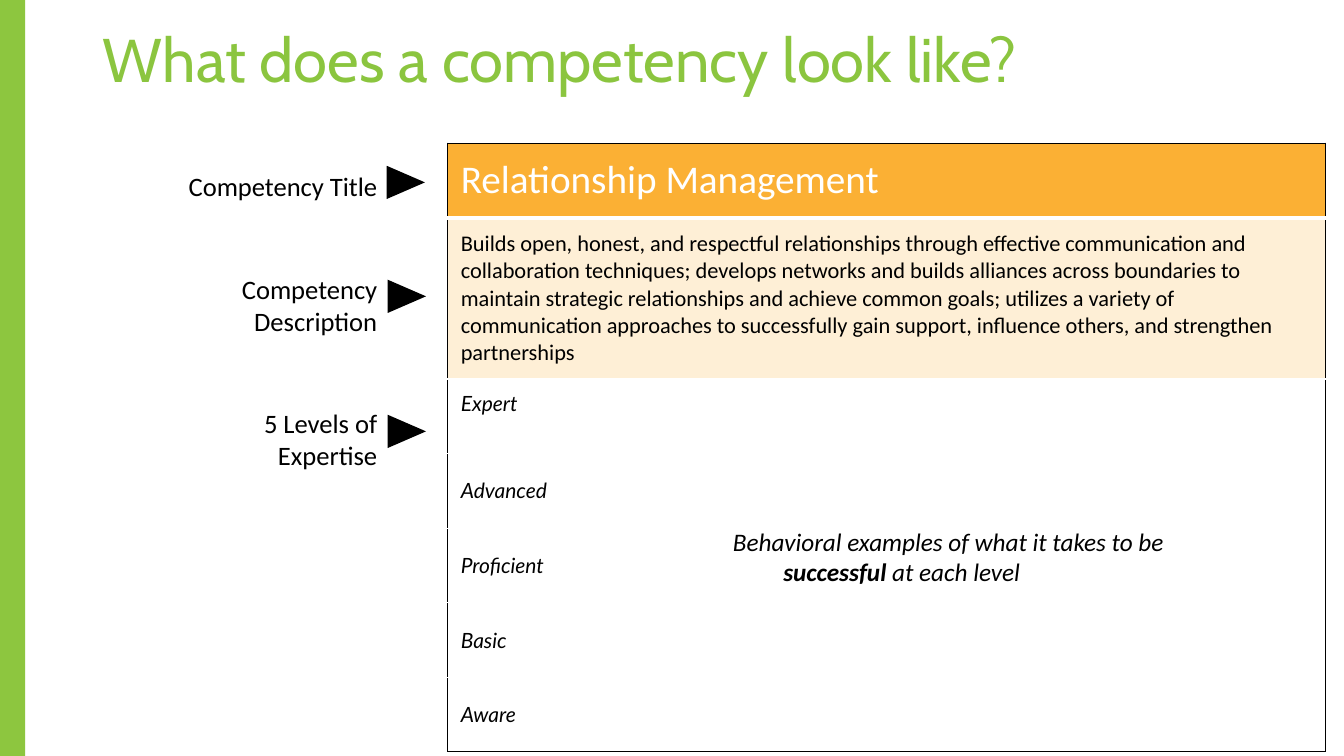
from lxml import etree
from pptx import Presentation
from pptx.dml.color import RGBColor
from pptx.enum.shapes import MSO_SHAPE
from pptx.enum.text import MSO_ANCHOR, MSO_AUTO_SIZE, PP_ALIGN
from pptx.oxml.ns import qn
from pptx.util import Inches, Pt

RECT, TRIANGLE = MSO_SHAPE.RECTANGLE, MSO_SHAPE.ISOSCELES_TRIANGLE
MIDDLE, TOP = MSO_ANCHOR.MIDDLE, MSO_ANCHOR.TOP
LEFT, RIGHT = PP_ALIGN.LEFT, PP_ALIGN.RIGHT
GROW, NO_FIT = MSO_AUTO_SIZE.SHAPE_TO_FIT_TEXT, MSO_AUTO_SIZE.NONE

COLORS = {
    "title": "8BC53F", "bar": "8DC63F", "header": "FBB034",
    "description": "FEEFD6", "white": "FFFFFF", "black": "000000",
}
DESCRIPTION = (
    "Builds open, honest, and respectful relationships through effective "
    "communication and collaboration techniques; develops networks and builds "
    "alliances across boundaries to maintain strategic relationships and achieve "
    "common goals; utilizes a variety of communication approaches to successfully "
    "gain support, influence others, and strengthen partnerships"
)
LEVELS = ["Expert", "Advanced", "Proficient", "Basic", "Aware"]
# text, label top, pointer left, pointer top
LABELS = [
    ("Competency Title", 1.64, 3.86, 1.62),
    ("Competency Description", 2.66, 3.87, 2.75),
    ("5 Levels of Expertise", 3.99, 3.87, 4.09),
]


def color(name):
    return RGBColor.from_string(COLORS[name])


class CompetencySlide:
    def __init__(self, prs, font="Calibri"):
        self.s = prs.slides.add_slide(prs.slide_layouts[5])
        self.font = font

    def format_run(self, r, size, ink="black", font=None, italic=False, bold=False):
        r.font.name = font or self.font
        r.font.size = Pt(size)
        r.font.italic = italic
        r.font.bold = bold
        r.font.color.rgb = color(ink)

    def title(self, text, x, y, w, h):
        sp = self.s.shapes.title
        sp.left, sp.top, sp.width, sp.height = map(Inches, (x, y, w, h))
        tf = sp.text_frame
        tf.text = text
        tf.vertical_anchor = MIDDLE
        tf.auto_size = NO_FIT
        p = tf.paragraphs[0]
        p.alignment = LEFT
        p.line_spacing = 0.9
        self.format_run(p.runs[0], 44, "title", "Cabin")

    def shape(self, kind, x, y, w, h, fill, rotation=0):
        sp = self.s.shapes.add_shape(kind, *map(Inches, (x, y, w, h)))
        sp.shadow.inherit = False
        sp.rotation = rotation
        sp.fill.solid()
        sp.fill.fore_color.rgb = color(fill)
        sp.line.fill.background()

    def text_box(self, x, y, w, h, align=LEFT):
        """Add a wrapping text box and return its first paragraph."""
        tf = self.s.shapes.add_textbox(*map(Inches, (x, y, w, h))).text_frame
        tf.word_wrap = True
        tf.auto_size = GROW
        p = tf.paragraphs[0]
        p.alignment = align
        return p

    def label(self, text, y, w=2.27):
        p = self.text_box(1.57, y, w, 0.76 if len(text) > 16 else 0.42, RIGHT)
        p.text = text
        self.format_run(p.runs[0], 19)

    def note(self, x, y, w, h):
        p = self.text_box(x, y, w, h)
        p.text = "Behavioral examples of what it takes to be \v\t"
        for text in ("successful ", "at each level"):
            p.add_run().text = text
        for r in p.runs:
            self.format_run(r, 18, italic=True, bold=r.text == "successful ")

    def table(self, x, y, columns, rows):
        frame = self.s.shapes.add_table(
            len(rows), len(columns), Inches(x), Inches(y),
            Inches(sum(columns)), Inches(sum(rows)))
        table = frame.table
        table.first_row = table.horz_banding = False
        for column, width in zip(table.columns, columns):
            column.width = Inches(width)
        for row, height in zip(table.rows, rows):
            row.height = Inches(height)
        return table

    def cell(self, cell, text, size, ink="black", font=None, italic=False):
        cell.text = text
        cell.vertical_anchor = MIDDLE
        cell.margin_left = cell.margin_right = Inches(0.13)
        cell.margin_top = cell.margin_bottom = Inches(0.05)
        self.format_run(cell.text_frame.paragraphs[0].runs[0], size, ink, font, italic)

    def borders(self, cell, **edges):
        """Draw edges given as L, R, T, B = (colour, points)."""
        tc_pr = cell._tc.get_or_add_tcPr()
        for i, side in enumerate("LRTB"):
            ink, width = edges[side]
            ln = etree.Element(qn("a:ln" + side), w=str(Pt(width)))
            fill = etree.SubElement(ln, qn("a:solidFill"))
            etree.SubElement(fill, qn("a:srgbClr"), val=COLORS[ink])
            tc_pr.insert(i, ln)

    def competency_table(self):
        table = self.table(4.44, 1.42, [2.32, 6.39], [0.74, 1.6] + [0.74] * 5)
        last = len(table.rows) - 1
        for row in (0, 1):
            table.cell(row, 0).merge(table.cell(row, 1))
        table.cell(2, 1).merge(table.cell(last, 1))

        self.cell(table.cell(0, 0), "Relationship Management", 28, "white")
        self.cell(table.cell(1, 0), DESCRIPTION, 16)
        for row, level in enumerate(LEVELS, start=2):
            self.cell(table.cell(row, 0), level, 15, font="Lato", italic=True)
        expert = table.cell(2, 0)
        expert.vertical_anchor = TOP
        expert.margin_top = Inches(0.12)

        black, white, thick = ("black", 1), ("white", 1), ("white", 3)
        fills = ["header", "description"] + ["white"] * len(LEVELS)
        for row, fill in enumerate(fills):
            for col in (0, 1):
                cell = table.cell(row, col)
                cell.fill.solid()
                cell.fill.fore_color.rgb = color(fill)
                spans_right = row < 2 or col == 1
                spans_down = row == last or (row, col) == (2, 1)
                self.borders(
                    cell,
                    L=white if col else black,
                    R=black if spans_right else white,
                    T={0: black, 1: thick}.get(row, white),
                    B=thick if row == 0 else black if spans_down else white)


def main():
    prs = Presentation()
    prs.slide_width, prs.slide_height = Inches(13.33), Inches(7.5)
    slide = CompetencySlide(prs)
    slide.competency_table()
    for text, top, pointer_x, pointer_y in LABELS:
        slide.shape(TRIANGLE, pointer_x, pointer_y, 0.33, 0.38, "black", rotation=90)
        slide.label(text, top)
    slide.title("What does a competency look like?", 0.92, -0.1, 11.5, 1.45)
    slide.shape(RECT, 0, 0, 0.25, 7.5, "bar")
    slide.note(7.17, 5.17, 4.58, 1.01)
    prs.save("out.pptx")


if __name__ == "__main__":
    main()
